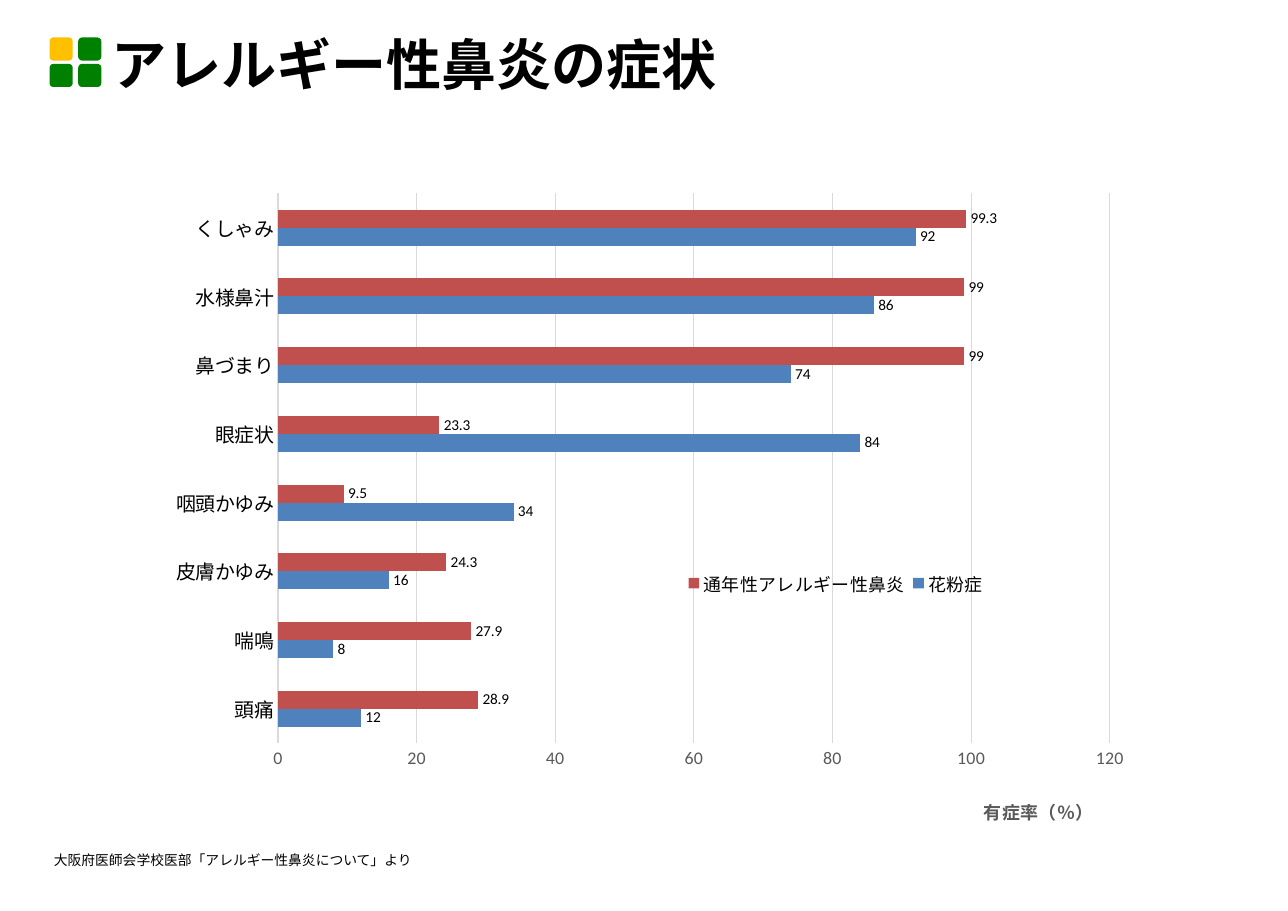
from lxml.etree import SubElement
from pptx import Presentation
from pptx.chart.data import CategoryChartData
from pptx.dml.color import RGBColor
from pptx.enum.chart import XL_CHART_TYPE, XL_LABEL_POSITION, XL_LEGEND_POSITION, XL_TICK_MARK
from pptx.enum.shapes import MSO_SHAPE
from pptx.enum.text import MSO_ANCHOR
from pptx.oxml.ns import qn
from pptx.util import Pt

PX = 9144
JAPANESE = "Noto Sans CJK JP"
SYMPTOMS = ["頭痛", "喘鳴", "皮膚かゆみ", "咽頭かゆみ", "眼症状", "鼻づまり", "水様鼻汁", "くしゃみ"]
SERIES = [
    ("花粉症", "4F81BD", [12, 8, 16, 34, 84, 74, 86, 92]),
    ("通年性アレルギー性鼻炎", "C0504D", [28.9, 27.9, 24.3, 9.5, 23.3, 99, 99, 99.3]),
]


def color(value):
    """Turn a hex string into a colour."""
    return RGBColor.from_string(value)


def emu(box):
    """Turn a box in px into EMU lengths."""
    return [length * PX for length in box]


def style_font(font, size, shade="000000", name="Calibri", bold=False):
    """Set size, colour, typeface and weight of a font."""
    font.size, font.bold, font.name = Pt(size), bold, name
    font.color.rgb = color(shade)


def add_text(page, box, text, size, bold=False, anchor=MSO_ANCHOR.TOP, spacing=1.0):
    """Write one paragraph of Japanese text in a box."""
    frame = page.shapes.add_textbox(*emu(box)).text_frame
    frame.word_wrap = True
    frame.vertical_anchor = anchor
    para = frame.paragraphs[0]
    para.line_spacing = spacing
    span = para.add_run()
    span.text = text
    style_font(span.font, size, name=JAPANESE, bold=bold)
    SubElement(span.font._element, qn("a:ea"), typeface=JAPANESE)


def add_tiles(page, box):
    """Draw the four rounded tiles at the corners of a box."""
    left, top, width, height = box
    side = 21
    group = page.shapes.add_group_shape()
    for index, shade in enumerate(["FFC000", "008000", "008000", "008000"]):
        row, column = divmod(index, 2)
        place = (left + column * (width - side), top + row * (height - side), side, side)
        tile = group.shapes.add_shape(MSO_SHAPE.ROUNDED_RECTANGLE, *emu(place))
        tile.shadow.inherit = False
        tile.fill.solid()
        tile.fill.fore_color.rgb = color(shade)
        tile.line.fill.background()


def set_layout(element, before, inner=False, **fractions):
    """Place a chart part by fractions of the chart, ahead of the named siblings."""
    for old in element.findall(qn("c:layout")):
        element.remove(old)
    layout = SubElement(element, qn("c:layout"))
    manual = SubElement(layout, qn("c:manualLayout"))
    if inner:
        SubElement(manual, qn("c:layoutTarget"), val="inner")
    for axis in "xy":
        SubElement(manual, qn(f"c:{axis}Mode"), val="edge")
    for key, value in fractions.items():
        SubElement(manual, qn(f"c:{key}"), val=str(value))
    following = [child for child in element if child.tag in map(qn, before)]
    if following:
        following[0].addprevious(layout)


def style_axes(chart):
    """Format the symptom axis and the percentage axis."""
    for axis, size, shade in [(chart.category_axis, 13, "000000"), (chart.value_axis, 11.7, "595959")]:
        axis.major_tick_mark = axis.minor_tick_mark = XL_TICK_MARK.NONE
        style_font(axis.tick_labels.font, size, shade)
    chart.category_axis.has_major_gridlines = False
    chart.value_axis.has_major_gridlines = True
    for line in (chart.category_axis.format.line, chart.value_axis.major_gridlines.format.line):
        line.color.rgb = color("D9D9D9")
        line.width = Pt(0.73)
    chart.value_axis.format.line.fill.background()
    chart.value_axis.minimum_scale = 0
    chart.value_axis.maximum_scale = 120
    chart.value_axis.major_unit = 20


def style_bars(chart):
    """Colour and label the bars."""
    plot = chart.plots[0]
    plot.gap_width, plot.overlap, plot.vary_by_categories = 182, 0, False
    for series, (_, shade, _) in zip(plot.series, SERIES):
        series.format.fill.solid()
        series.format.fill.fore_color.rgb = color(shade)
        labels = series.data_labels
        labels.show_value = True
        labels.position = XL_LABEL_POSITION.OUTSIDE_END
        style_font(labels.font, 10)


def add_symptom_chart(page, box):
    """Chart the share of patients with each symptom."""
    data = CategoryChartData()
    data.categories = SYMPTOMS
    for name, _, values in SERIES:
        data.add_series(name, values)
    chart = page.shapes.add_chart(XL_CHART_TYPE.BAR_CLUSTERED, *emu(box), data).chart
    style_font(chart.font, 10)
    style_axes(chart)
    style_bars(chart)

    chart.has_title = True
    para = chart.chart_title.text_frame.paragraphs[0]
    span = para.add_run()
    span.text = "有症率（％）"
    style_font(span.font, 11.7, "595959", bold=True)
    chart.has_legend = True
    chart.legend.position = XL_LEGEND_POSITION.RIGHT
    chart.legend.include_in_layout = False
    style_font(chart.legend.font, 11.7)

    set_layout(chart.chart_title._element, ["c:overlay"], x=0.82, y=0.95)
    set_layout(chart.legend._element, ["c:overlay"], x=0.53, y=0.58, w=0.3, h=0.12)
    plot_area = chart._chartSpace.chart.plotArea
    set_layout(plot_area, ["c:barChart"], inner=True, x=0.14, y=0.063, w=0.805, h=0.814)


def build_symptom_page(deck):
    """Lay out the page on allergic rhinitis symptoms."""
    page = deck.slides.add_slide(deck.slide_layouts[6])
    add_symptom_chart(page, (121, 137, 938, 617))
    add_tiles(page, (45, 34, 47, 45))
    add_text(page, (91, 27, 992, 68), "アレルギー性鼻炎の症状", 36,
             bold=True, anchor=MSO_ANCHOR.MIDDLE, spacing=0.9)
    add_text(page, (39, 768, 708, 25), "大阪府医師会学校医部「アレルギー性鼻炎について」より", 9)


def main():
    """Build the deck and save it."""
    deck = Presentation()
    deck.slide_width, deck.slide_height = emu((1169, 827))
    build_symptom_page(deck)
    deck.save("out.pptx")


if __name__ == "__main__":
    main()
